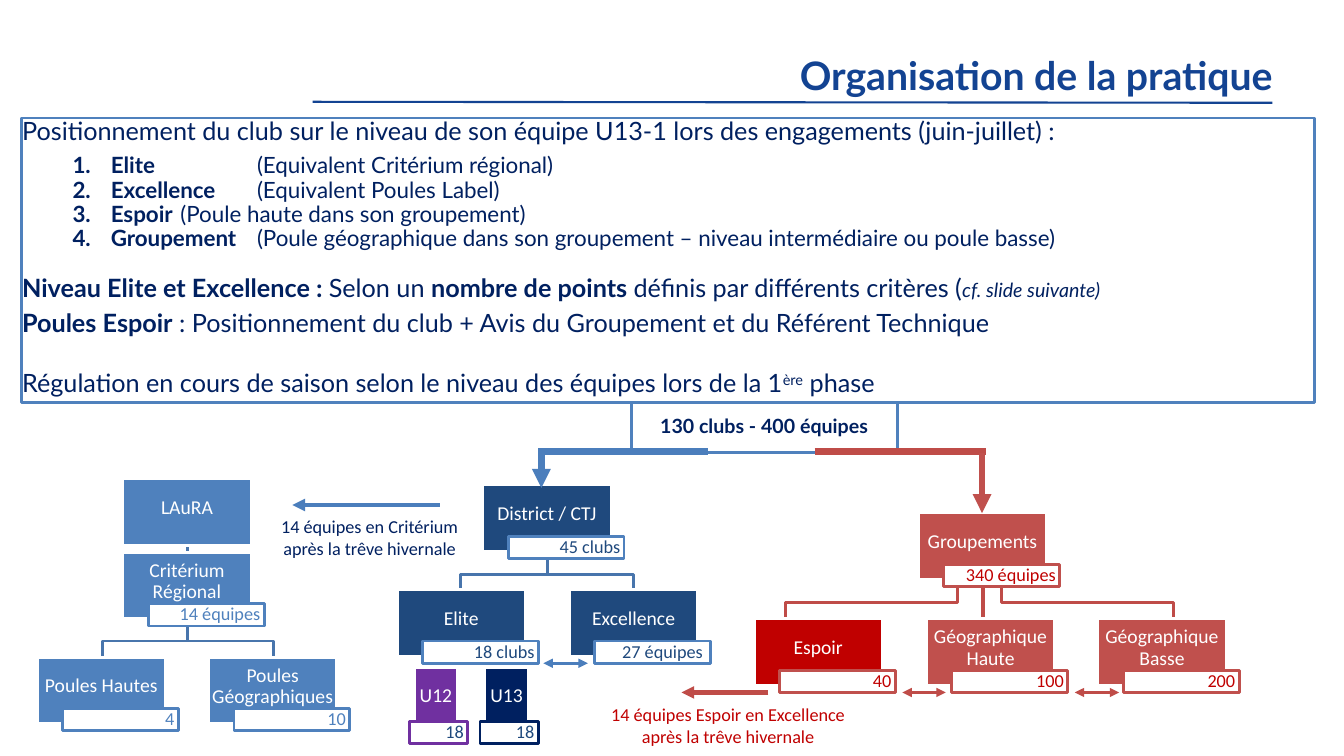
"""Build the slide on how the U13 clubs and teams are organised."""
from dataclasses import dataclass
from typing import Optional

from lxml.etree import SubElement
from pptx import Presentation
from pptx.dml.color import RGBColor
from pptx.enum.shapes import MSO_CONNECTOR, MSO_SHAPE
from pptx.enum.text import MSO_ANCHOR, PP_ALIGN
from pptx.oxml.ns import qn
from pptx.util import Inches, Pt

WHITE, NAVY, TITLE_BLUE = "FFFFFF", "002060", "134392"
BLUE, DARK_BLUE, LINE_BLUE, ARROW_BLUE = "4F81BD", "1F497D", "4875AC", "4B7EBC"
RED, DARK_RED, LINE_RED, PURPLE = "C0504D", "C00000", "BF4C48", "7030A0"
NODE_HEIGHT, TAG_HEIGHT, DROP, BEND = 0.66, 0.22, 0.38, 0.23
BOX_MARGINS = (0.01, 0.01, 0.01, 0.09)
TAG_MARGINS = (0.04, 0.01, 0.04, 0.01)
LIST_TABS = (1.57, 2.33)


@dataclass
class Style:
    fill: str
    border: str
    count_color: str
    width: float = 1.27
    tag_width: float = 1.15
    tag_left: float = 0.25
    tag_top: float = 0.51


@dataclass
class Node:
    label: str
    left: float
    top: float
    style: Style
    count: str = ""


@dataclass
class Branch:
    start: float
    end: float
    top: float
    color: str
    width: float = 2


@dataclass
class Arrow:
    start: tuple[float, float]
    end: tuple[float, float]
    color: str
    width: float
    head: bool = False
    tail: bool = True


@dataclass
class Span:
    text: str
    size: float = 18
    bold: bool = False
    italic: bool = False
    raised: bool = False


@dataclass
class Line:
    spans: list[Span]
    numbered: bool = False
    before: float = 0


LEAGUE = Style(BLUE, BLUE, BLUE)
DISTRICT = Style(DARK_BLUE, BLUE, DARK_BLUE)
GROUPING = Style(RED, RED, DARK_RED)
HOPE = Style(DARK_RED, RED, DARK_RED)
U13 = Style(NAVY, NAVY, DARK_BLUE, 0.43, 0.58, -0.05, 0.54)
U12 = Style(PURPLE, PURPLE, DARK_BLUE, 0.43, 0.58, -0.05, 0.54)

NODES = [
    Node("District / CTJ", 4.79, 4.81, DISTRICT, "45 clubs"),
    Node("Elite", 3.94, 5.85, DISTRICT, "18 clubs"),
    Node("Excellence", 5.65, 5.85, DISTRICT, "27 équipes "),
    Node("Groupements", 9.11, 5.09, GROUPING, "340 équipes"),
    Node("Espoir", 7.48, 6.14, HOPE, "40"),
    Node("Géographique Haute", 9.19, 6.14, GROUPING, "100"),
    Node("Géographique Basse", 10.89, 6.14, GROUPING, "200"),
    Node("LAuRA", 1.22, 4.75, LEAGUE),
    Node("Critérium Régional", 1.22, 5.48, LEAGUE, "14 équipes"),
    Node("Poules Hautes", 0.37, 6.52, LEAGUE, "4"),
    Node("Poules Géographiques", 2.07, 6.52, LEAGUE, "10"),
    Node("U13", 4.81, 6.62, U13, "18"),
    Node("U12", 4.11, 6.62, U12, "18"),
]
BRANCHES = [
    Branch(9.93, 11.64, 5.75, LINE_RED, 2.25), Branch(9.75, 9.75, 5.75, LINE_RED, 2.25),
    Branch(9.5, 7.79, 5.75, LINE_RED, 2.25), Branch(5.43, 6.28, 5.47, LINE_BLUE),
    Branch(5.43, 4.57, 5.47, LINE_BLUE), Branch(1.86, 2.71, 6.13, LINE_BLUE),
    Branch(1.86, 1.02, 6.13, LINE_BLUE), Branch(1.86, 1.86, 5.1, LINE_BLUE),
]
ARROWS = [
    Arrow((5.39, 6.58), (5.83, 6.58), ARROW_BLUE, 2.25, head=True),
    Arrow((8.95, 6.87), (9.38, 6.87), LINE_RED, 2.25, head=True),
    Arrow((10.66, 6.87), (11.1, 6.87), LINE_RED, 2.25, head=True),
    Arrow((7.62, 6.87), (6.76, 6.87), LINE_RED, 3),
    Arrow((8.08, 4.48), (9.78, 4.48), LINE_RED, 4.5, tail=False),
    Arrow((9.74, 4.49), (9.74, 5.09), RED, 4.5),
    Arrow((5.34, 4.48), (7.02, 4.48), ARROW_BLUE, 4.5, tail=False),
    Arrow((5.37, 4.51), (5.37, 4.84), ARROW_BLUE, 4.5),
    Arrow((4.36, 5.01), (2.9, 5.01), ARROW_BLUE, 3),
    Arrow((3.1, 1.01), (12.62, 1.02), TITLE_BLUE, 1.5, tail=False),
]
LEVELS = [
    ("Elite", " \t\t(Equivalent Critérium régional)"),
    ("Excellence", " \t(Equivalent Poules Label)"),
    ("Espoir", " \t(Poule haute dans son groupement)"),
    ("Groupement", " \t(Poule géographique dans son groupement – niveau intermédiaire ou poule basse)"),
]
RULES = [
    Line([Span("Positionnement du club sur le niveau de son équipe U13-1 lors des engagements (juin-juillet) :")]),
    *[Line([Span(name, 16, bold=True), Span(detail, 16)], numbered=True) for name, detail in LEVELS],
    Line([Span("Niveau Elite et Excellence : ", bold=True), Span("Selon un "),
          Span("nombre de points ", bold=True), Span("définis par différents critères ("),
          Span("cf. slide suivante)", 14, italic=True)], before=17.3),
    Line([Span("Poules Espoir", bold=True),
          Span(" : Positionnement du club + Avis du Groupement et du Référent Technique")]),
    Line([Span("Régulation en cours de saison selon le niveau des équipes lors de la 1"),
          Span("ère", raised=True), Span(" phase")], before=17.3),
]


def rgb(color: str) -> RGBColor:
    return RGBColor.from_string(color)


def set_frame(frame, margins: tuple, anchor=MSO_ANCHOR.MIDDLE) -> None:
    frame.word_wrap = True
    frame.vertical_anchor = anchor
    frame.margin_left, frame.margin_top, frame.margin_right, frame.margin_bottom = map(Inches, margins)


def write(frame, text: str, size: float, color: str, align, font: str = "Calibri",
          bold: bool = False, spacing: Optional[float] = 0.9) -> None:
    frame.text = text
    for para in frame.paragraphs:
        para.alignment, para.line_spacing = align, spacing
        for span in para.runs:
            span.font.size, span.font.name, span.font.bold = Pt(size), font, bold
            span.font.color.rgb = rgb(color)


def add_box(page, left: float, top: float, width: float, height: float, fill: str, border: str):
    box = page.shapes.add_shape(MSO_SHAPE.RECTANGLE, *map(Inches, (left, top, width, height)))
    box.shadow.inherit = False
    box.fill.solid()
    box.fill.fore_color.rgb = rgb(fill)
    box.line.color.rgb, box.line.width = rgb(border), Pt(2)
    return box


def add_node(page, node: Node) -> None:
    style = node.style
    box = add_box(page, node.left, node.top, style.width, NODE_HEIGHT, style.fill, WHITE)
    set_frame(box.text_frame, BOX_MARGINS)
    write(box.text_frame, node.label, 14, WHITE, PP_ALIGN.CENTER)
    if node.count:
        tag = add_box(page, node.left + style.tag_left, node.top + style.tag_top, style.tag_width,
                      TAG_HEIGHT, WHITE, style.border)
        set_frame(tag.text_frame, TAG_MARGINS)
        write(tag.text_frame, node.count, 13, style.count_color, PP_ALIGN.RIGHT)


def add_arrow(page, arrow: Arrow) -> None:
    line = page.shapes.add_connector(MSO_CONNECTOR.STRAIGHT, *map(Inches, arrow.start + arrow.end))
    line.line.color.rgb, line.line.width = rgb(arrow.color), Pt(arrow.width)
    for shown, end in ((arrow.head, "a:headEnd"), (arrow.tail, "a:tailEnd")):
        if shown:
            SubElement(line.line._get_or_add_ln(), qn(end), type="triangle")
    SubElement(line._element.spPr, qn("a:effectLst"))


def add_branch(page, branch: Branch) -> None:
    if branch.start == branch.end:
        add_arrow(page, Arrow((branch.start, branch.top), (branch.end, branch.top + DROP),
                              branch.color, branch.width, tail=False))
        return
    start, end, top, bend, bottom = map(
        Inches, (branch.start, branch.end, branch.top, branch.top + BEND, branch.top + DROP))
    builder = page.shapes.build_freeform(start, top)
    builder.add_line_segments([(start, bend), (end, bend), (end, bottom)], close=False)
    elbow = builder.convert_to_shape()
    elbow.shadow.inherit = False
    elbow.fill.background()
    elbow.line.color.rgb, elbow.line.width = rgb(branch.color), Pt(branch.width)


def add_rules(page) -> None:
    frame = add_box(page, 0.21, 1.17, 12.83, 2.82, WHITE, BLUE).text_frame
    set_frame(frame, BOX_MARGINS, MSO_ANCHOR.TOP)
    for index, line in enumerate(RULES):
        para = frame.add_paragraph() if index else frame.paragraphs[0]
        para.alignment, para.line_spacing = PP_ALIGN.LEFT, 0.9
        para.space_before, para.space_after = Pt(line.before), Pt(0 if line.numbered else 6)
        if line.numbered:
            para.level = 1
            props = para._p.get_or_add_pPr()
            props.set("marL", str(Inches(0.88)))
            props.set("indent", str(Inches(-0.38)))
            SubElement(props, qn("a:buFont"), typeface="+mj-lt")
            SubElement(props, qn("a:buAutoNum"), type="arabicPeriod")
            tabs = SubElement(props, qn("a:tabLst"))
            for stop in LIST_TABS:
                SubElement(tabs, qn("a:tab"), pos=str(Inches(stop)), algn="l")
        for part in line.spans:
            span = para.add_run()
            span.text = part.text
            span.font.name, span.font.size = "Lato", Pt(part.size)
            span.font.bold, span.font.italic = part.bold, part.italic
            span.font.color.rgb = rgb(NAVY)
            if part.raised:
                span.font._element.set("baseline", "30000")


def add_note(page, left: float, top: float, width: float, text: str, color: str) -> None:
    box = page.shapes.add_textbox(*map(Inches, (left, top, width, 0.54)))
    box.text_frame.word_wrap = True
    write(box.text_frame, text, 13, color, PP_ALIGN.CENTER, spacing=None)


def main() -> None:
    deck = Presentation()
    deck.slide_width, deck.slide_height = Inches(13.33), Inches(7.5)
    page = deck.slides.add_slide(deck.slide_layouts[6])
    title = page.shapes.add_textbox(*map(Inches, (3.06, 0.4, 9.66, 0.63)))
    set_frame(title.text_frame, (0.1, 0.05, 0.1, 0.05), MSO_ANCHOR.BOTTOM)
    write(title.text_frame, "Organisation de la pratique", 28, TITLE_BLUE, PP_ALIGN.RIGHT, "Lato", True, None)
    add_rules(page)
    for branch in BRANCHES:
        add_branch(page, branch)
    total = add_box(page, 6.26, 3.99, 2.64, 0.5, WHITE, BLUE)
    set_frame(total.text_frame, TAG_MARGINS)
    write(total.text_frame, "130 clubs - 400 équipes", 14, NAVY, PP_ALIGN.CENTER, "Lato", True)
    for node in NODES:
        add_node(page, node)
    for arrow in ARROWS:
        add_arrow(page, arrow)
    add_note(page, 5.9, 6.93, 2.64, "14 équipes Espoir en Excellence\naprès la trêve hivernale", DARK_RED)
    add_note(page, 2.68, 5.06, 1.97, "14 équipes en Critérium après la trêve hivernale", NAVY)
    deck.save("out.pptx")


if __name__ == "__main__":
    main()
